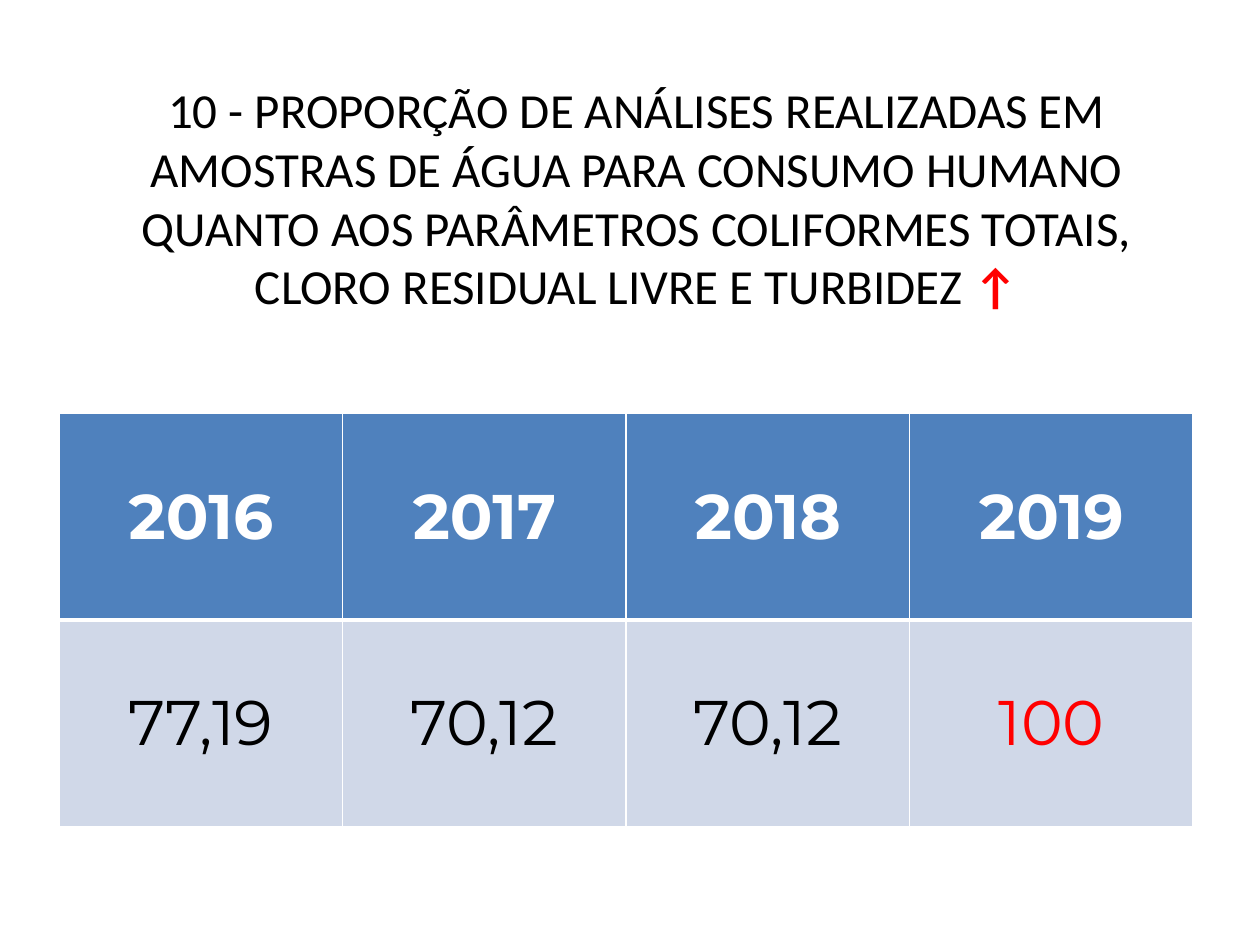
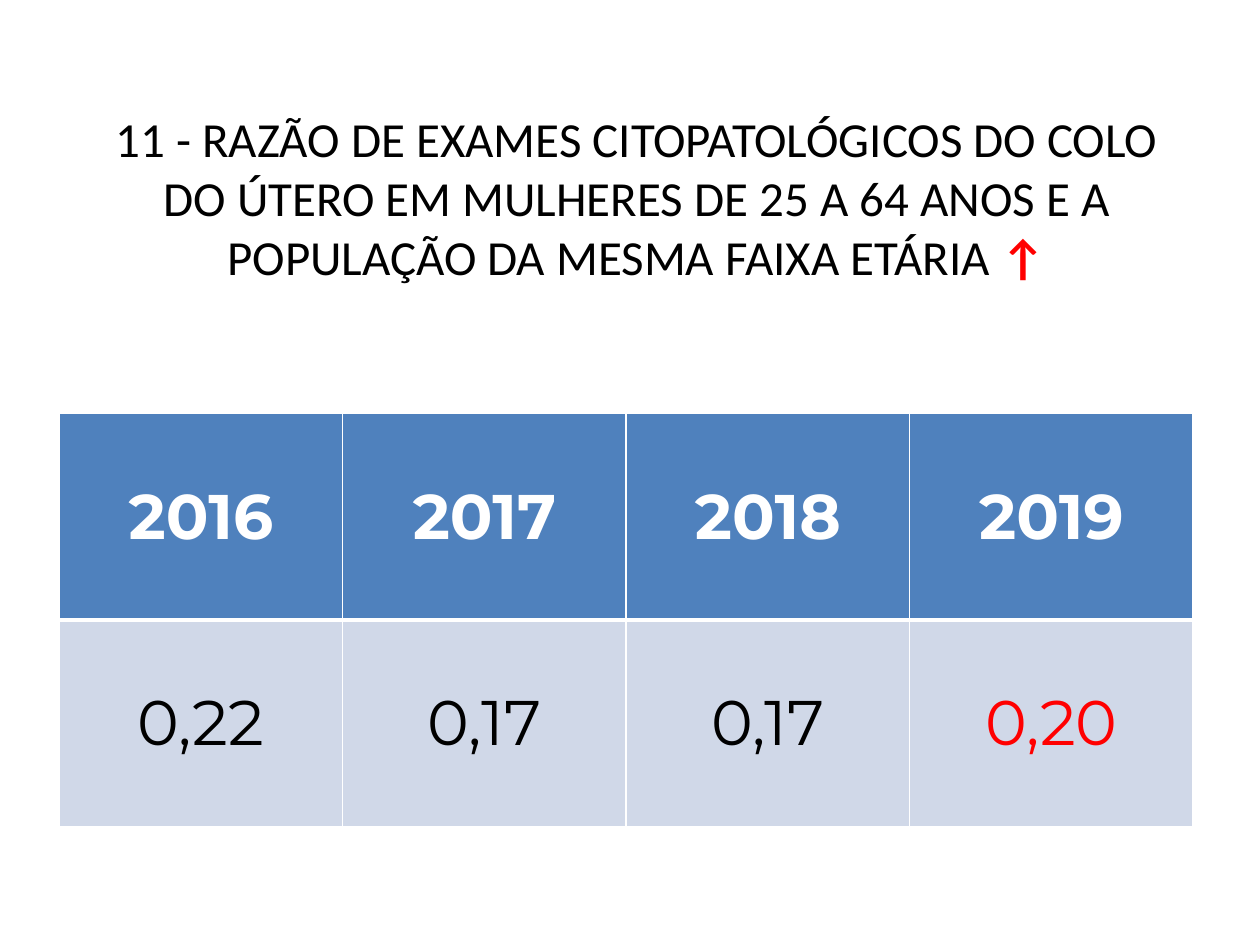
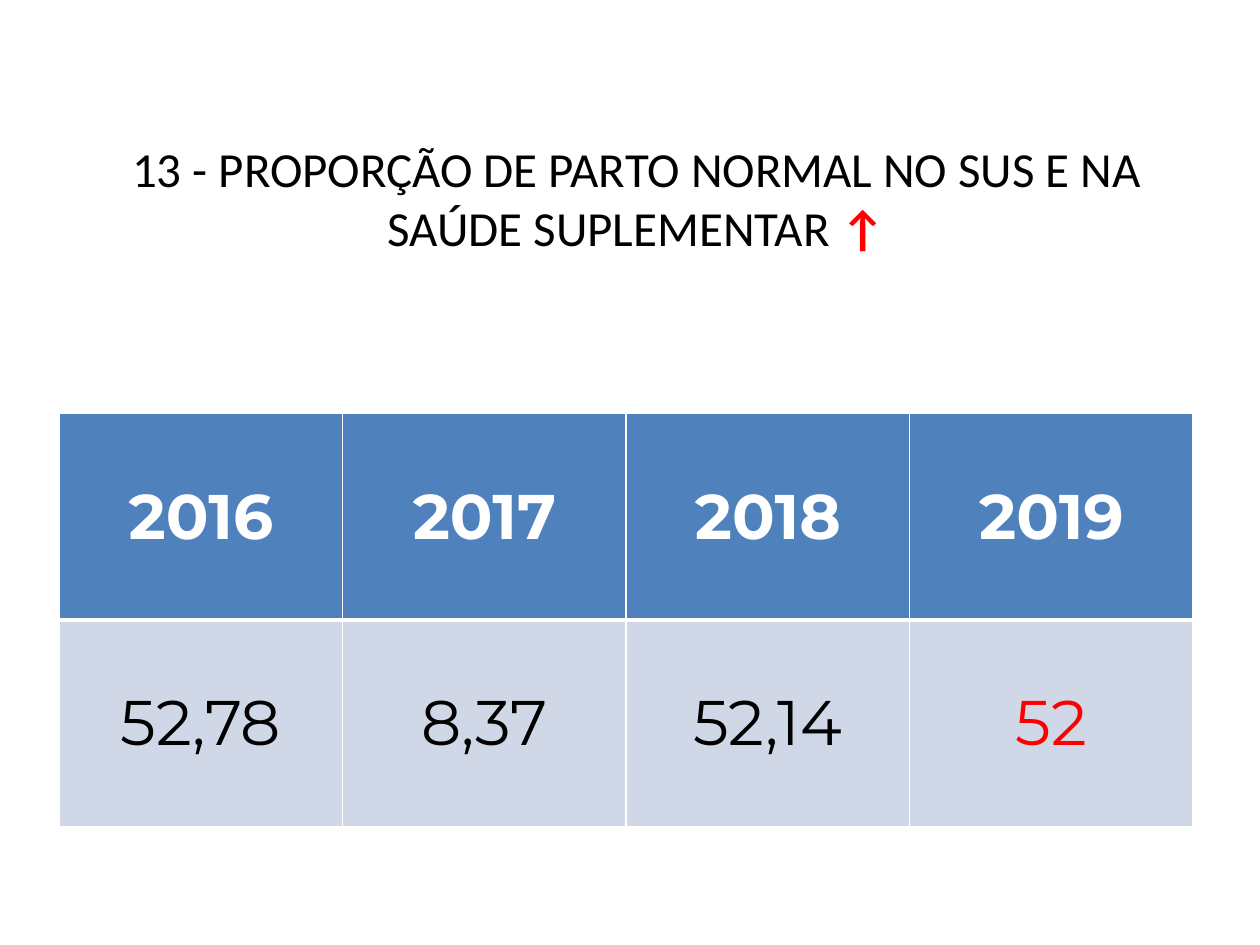
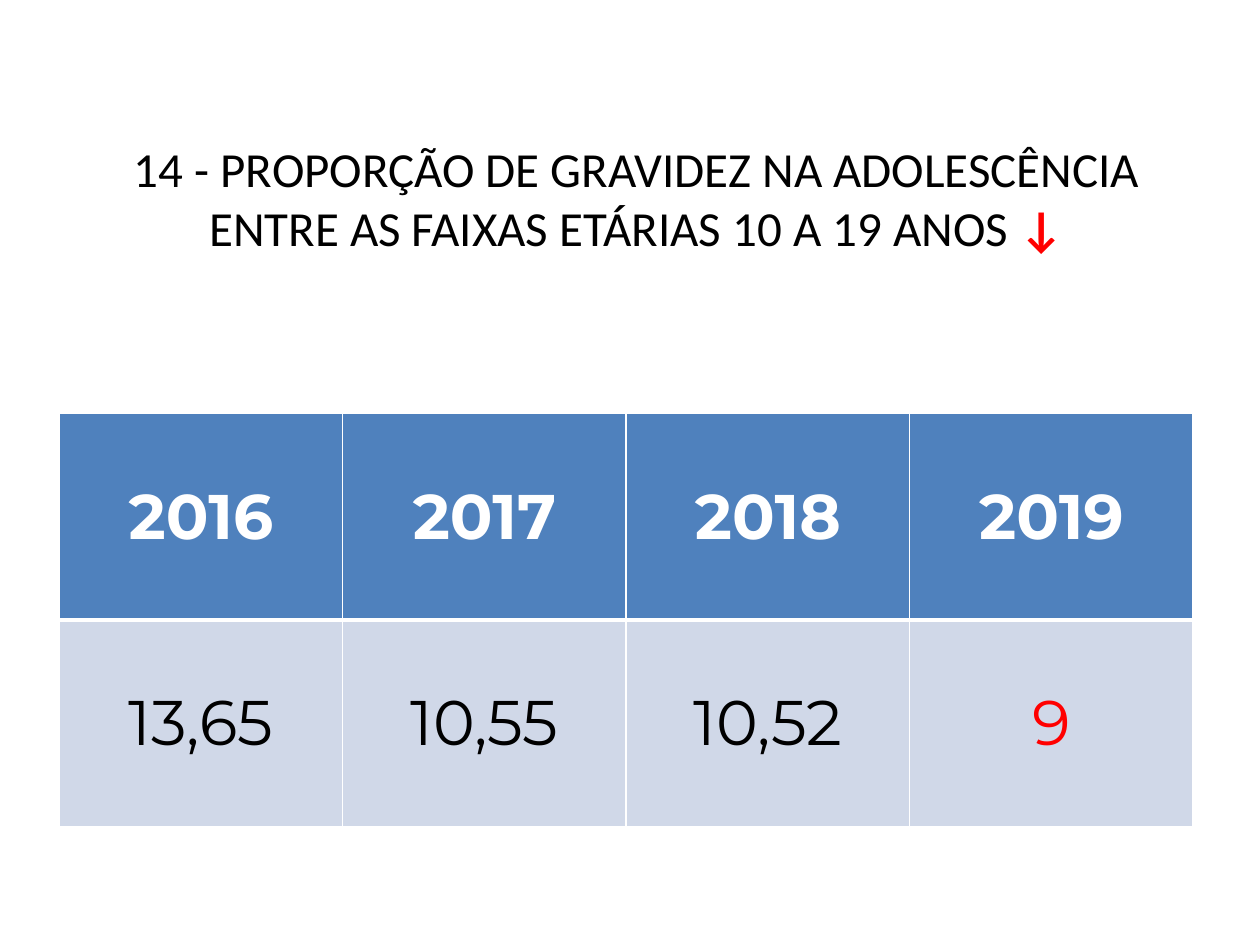
from lxml import etree
from pptx import Presentation
from pptx.dml.color import RGBColor
from pptx.enum.text import MSO_ANCHOR, PP_ALIGN
from pptx.oxml.ns import qn
from pptx.util import Inches, Pt

CENTER = PP_ALIGN.CENTER
MIDDLE = MSO_ANCHOR.MIDDLE
TITLE_ONLY = 5

BLACK, WHITE, RED = "000000", "FFFFFF", "FF0000"
HEADER_FILL, VALUE_FILL = "4F81BD", "D0D8E8"
TITLE_FONT, TABLE_FONT = "Calibri", "Montserrat"

YEARS = ["2016", "2017", "2018", "2019"]
INDICATORS = [
    ("10 - PROPORÇÃO DE ANÁLISES REALIZADAS EM AMOSTRAS DE ÁGUA PARA CONSUMO HUMANO "
     "QUANTO AOS PARÂMETROS COLIFORMES TOTAIS, CLORO RESIDUAL LIVRE E TURBIDEZ ",
     "↑", ["77,19", "70,12", "70,12", "100"]),
    ("11 - RAZÃO DE EXAMES CITOPATOLÓGICOS DO COLO DO ÚTERO EM MULHERES DE 25 A 64 ANOS "
     "E A POPULAÇÃO DA MESMA FAIXA ETÁRIA ",
     "↑", ["0,22", "0,17", "0,17", "0,20"]),
    ("13 - PROPORÇÃO DE PARTO NORMAL NO SUS E NA SAÚDE SUPLEMENTAR ",
     "↑", ["52,78", "8,37", "52,14", "52"]),
    ("14 - PROPORÇÃO DE GRAVIDEZ NA ADOLESCÊNCIA ENTRE AS FAIXAS ETÁRIAS 10 A 19 ANOS ",
     "↓", ["13,65", "10,55", "10,52", "9"]),
]


def format_run(run, font_name, size, color, bold=False):
    run.font.name = font_name
    run.font.size = Pt(size)
    run.font.bold = bold
    run.font.color.rgb = RGBColor.from_string(color)


def format_cell(cell, fill, borders):
    """Fill and centre a cell; borders maps each side tag to a width in points."""
    properties = cell._tc.get_or_add_tcPr()
    for side, width in borders.items():
        line = etree.SubElement(properties, qn(f"a:{side}"), w=str(Pt(width)))
        solid = etree.SubElement(line, qn("a:solidFill"))
        etree.SubElement(solid, qn("a:srgbClr"), val=WHITE)
    cell.fill.solid()
    cell.fill.fore_color.rgb = RGBColor.from_string(fill)
    cell.vertical_anchor = MIDDLE
    cell.text_frame.paragraphs[0].alignment = CENTER


presentation = Presentation()
presentation.slide_width = Inches(10)
presentation.slide_height = Inches(7.5)

for heading, arrow, values in INDICATORS:
    slide = presentation.slides.add_slide(presentation.slide_layouts[TITLE_ONLY])

    title = slide.shapes.title
    title.left, title.top = Inches(0.55), Inches(0.16)
    title.width, title.height = Inches(9), Inches(2.81)
    title.text_frame.text = heading
    title.text_frame.vertical_anchor = MIDDLE
    paragraph = title.text_frame.paragraphs[0]
    paragraph.alignment = CENTER
    format_run(paragraph.runs[0], TITLE_FONT, 28, BLACK)
    arrow_run = paragraph.add_run()
    arrow_run.text = arrow
    format_run(arrow_run, TITLE_FONT, 28, RED, bold=True)

    table = slide.shapes.add_table(
        2, len(YEARS), Inches(0.47), Inches(3.28), Inches(9), Inches(3.28)).table
    for column, (year, value) in enumerate(zip(YEARS, values)):
        header_cell, value_cell = table.cell(0, column), table.cell(1, column)
        header_cell.text_frame.text = year
        value_cell.text_frame.text = value
        format_cell(header_cell, HEADER_FILL, {"lnL": 1, "lnR": 1, "lnT": 1, "lnB": 3})
        format_cell(value_cell, VALUE_FILL, {"lnL": 1, "lnR": 1, "lnT": 3, "lnB": 1})
        value_color = RED if year == YEARS[-1] else BLACK
        format_run(header_cell.text_frame.paragraphs[0].runs[0], TABLE_FONT, 36, WHITE, bold=True)
        format_run(value_cell.text_frame.paragraphs[0].runs[0], TABLE_FONT, 36, value_color)

presentation.save("out.pptx")
